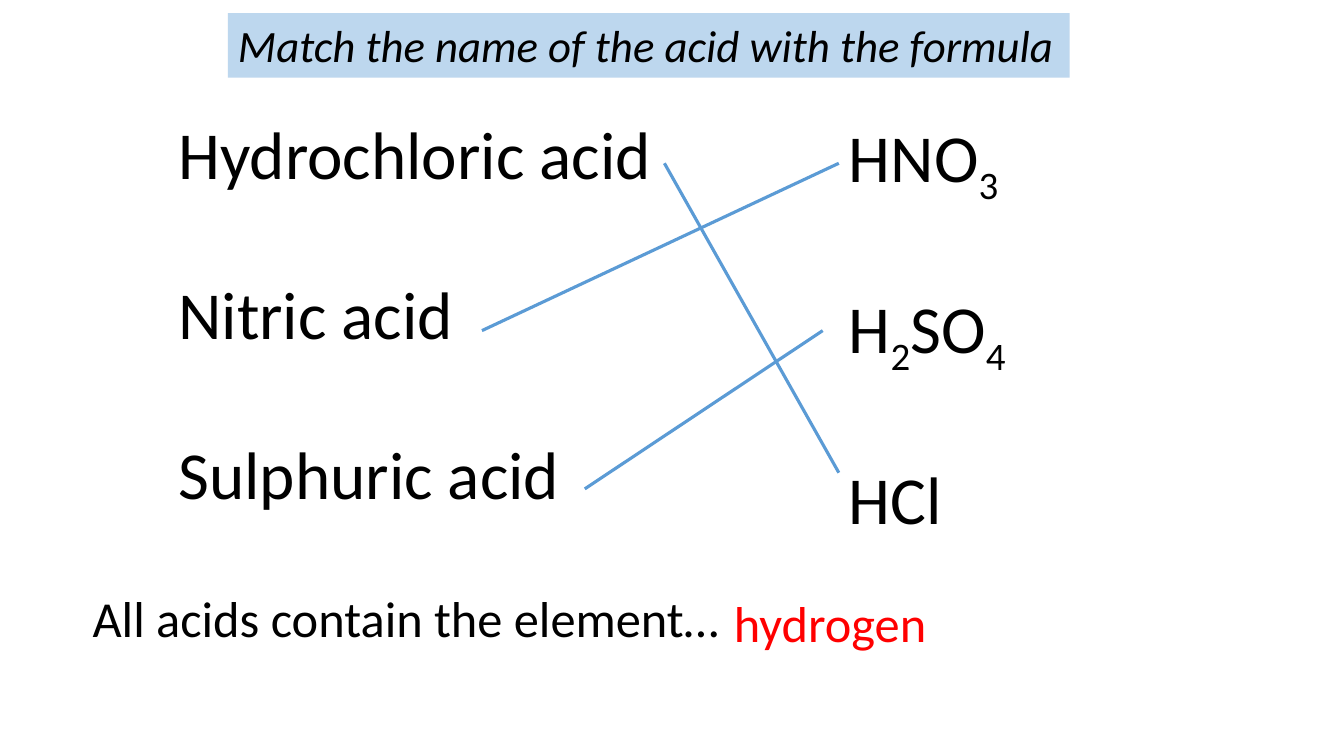
from pptx import Presentation
from pptx.dml.color import RGBColor
from pptx.enum.shapes import MSO_CONNECTOR as CONN
from pptx.enum.text import MSO_ANCHOR as ANCHOR, PP_ALIGN as ALIGN
from pptx.oxml.ns import qn
from pptx.util import Inches, Pt
from lxml import etree

BLACK = RGBColor(0x00, 0x00, 0x00)
RED = RGBColor(0xFF, 0x00, 0x00)
PALE_BLUE = RGBColor(0xBD, 0xD7, 0xEE)
BLUE = RGBColor(0x5B, 0x9B, 0xD5)

ACIDS = ["Hydrochloric acid", "Nitric acid", "Sulphuric acid"]
FORMULAS = ["HNO3", "H2SO4", "HCl"]
MATCHES = [
    (6.59, 1.62, 8.32, 4.69),
    (4.78, 3.28, 8.32, 1.62),
    (5.8, 4.85, 8.16, 3.28),
]


def set_font(p, size, color=BLACK):
    p.font.name = "Calibri"
    p.font.size = Pt(size)
    p.font.color.rgb = color


def add_formula_runs(p, text):
    pieces = "".join(f"|{c}|" if c.isdigit() else c for c in text).split("|")
    for piece in filter(None, pieces):
        r = p.add_run()
        r.text = piece
        if piece.isdigit():
            r.font._element.set("baseline", "-25000")


def add_text(slide, box, lines, size, color=BLACK):
    tf = slide.shapes.add_textbox(*map(Inches, box)).text_frame
    tf.word_wrap = True
    for i, line in enumerate(lines):
        p = tf.add_paragraph() if i else tf.paragraphs[0]
        add_formula_runs(p, line)
        set_font(p, size, color)
        if i:
            p.space_before = Pt(56.5)


def add_title(slide, text):
    sp = slide.shapes.title
    sp.left, sp.top, sp.width, sp.height = map(Inches, (2.26, 0.13, 8.35, 0.64))
    sp.fill.solid()
    sp.fill.fore_color.rgb = PALE_BLUE
    tf = sp.text_frame
    tf.text = text
    tf.vertical_anchor = ANCHOR.TOP
    p = tf.paragraphs[0]
    p.alignment = ALIGN.LEFT
    set_font(p, 32)
    p.font.italic = True


def add_match(slide, ends):
    line = slide.shapes.add_connector(CONN.STRAIGHT, *map(Inches, ends))
    line.line.color.rgb = BLUE
    line.line.width = Pt(2.25)
    etree.SubElement(line._element.spPr, qn("a:effectLst"))


def main():
    prs = Presentation()
    prs.slide_width, prs.slide_height = Inches(13.33), Inches(7.5)
    slide = prs.slides.add_slide(prs.slide_layouts[5])
    add_title(slide, "Match the name of the acid with the formula")
    add_text(slide, (1.67, 1.07, 5, 4.14), ACIDS, 48)
    add_text(slide, (8.32, 1.1, 4.25, 4.14), FORMULAS, 48)
    for ends in MATCHES:
        add_match(slide, ends)
    add_text(slide, (0.82, 5.78, 10.71, 0.71), ["All acids contain the element…"], 36)
    add_text(slide, (7.18, 5.82, 4.47, 0.71), ["hydrogen"], 36, RED)
    prs.save("out.pptx")


if __name__ == "__main__":
    main()
